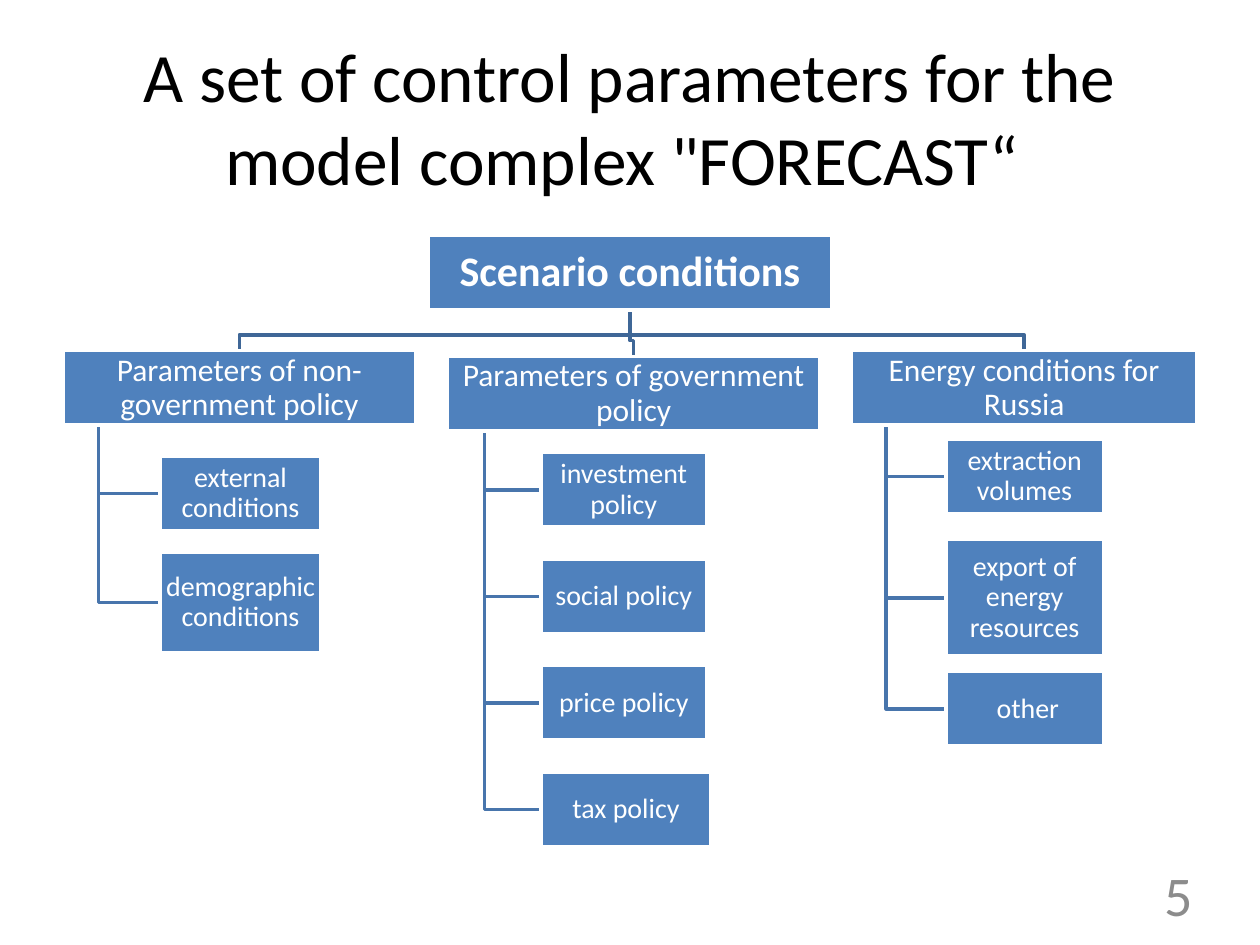
from lxml import etree
from pptx import Presentation
from pptx.dml.color import RGBColor
from pptx.enum.shapes import MSO_SHAPE
from pptx.enum.text import MSO_ANCHOR, PP_ALIGN
from pptx.util import Pt

RECTANGLE = MSO_SHAPE.RECTANGLE
MIDDLE = MSO_ANCHOR.MIDDLE
CENTER, RIGHT = PP_ALIGN.CENTER, PP_ALIGN.RIGHT

COLORS = {
    "box": "4F81BD", "white": "FFFFFF", "title": "000000", "number": "8C8C8C",
    "root_line": "3F6797", "item_line": "4875AC",
}
FONT = "Calibri"
ROW = 42.6          # usual box height
BEND = 9            # height of the last leg above a branch header
STEM = 0.1          # stem position as a share of the header width

ROOT = (244.8, 134.7, 230.4, ROW)
# Items: text, top below the header's top, width, height
BRANCHES = [
    {"text": "Parameters of non-government policy",
     "box": (36, 200.3, 201.6, ROW), "indent": 55.5,
     "items": [("external conditions", 60.5, 92, ROW),
               ("demographic conditions", 115.3, 92, 57.4)]},
    {"text": "Parameters of government policy",
     "box": (255.6, 203.7, 213, ROW), "indent": 53.5,
     "items": [(text, 54.9 + 60.9 * index, width, ROW)
               for index, (text, width) in enumerate([
                   ("investment policy", 94.7), ("social policy", 94.7),
                   ("price policy", 94.7), ("tax policy", 97.2)])]},
    {"text": "Energy conditions for Russia",
     "box": (486.6, 200.3, 197.3, ROW), "indent": 53.9,
     "items": [("extraction volumes", 50.7, 90, ROW),
               ("export of energy resources", 108, 90, 66.6),
               (" other", 183.5, 90, ROW)]},
]


def set_color(color_format, name):
    color_format.rgb = RGBColor.from_string(COLORS[name])


def write_text(shape, text, size, color, align=CENTER, inset=(7.2, 3.6),
               bold=False, spacing=1.0):
    frame = shape.text_frame
    horizontal, vertical = inset
    frame_format = {
        "word_wrap": True, "vertical_anchor": MIDDLE,
        "margin_left": Pt(horizontal), "margin_right": Pt(horizontal),
        "margin_top": Pt(vertical), "margin_bottom": Pt(vertical),
    }
    for name, value in frame_format.items():
        setattr(frame, name, value)
    paragraph = frame.paragraphs[0]
    paragraph.alignment = align
    paragraph.line_spacing = spacing
    run = paragraph.add_run()
    run.text = text
    for name, value in {"name": FONT, "size": Pt(size), "bold": bold}.items():
        setattr(run.font, name, value)
    set_color(run.font.color, color)


def add_label(slide, box, text, size, color, align=CENTER):
    shape = slide.shapes.add_textbox(*map(Pt, box))
    write_text(shape, text, size, color, align)


def add_box(slide, box, text, size, bold=False):
    shape = slide.shapes.add_shape(RECTANGLE, *map(Pt, box))
    shape.shadow.inherit = False
    shape.fill.solid()
    set_color(shape.fill.fore_color, "box")
    set_color(shape.line.color, "white")
    shape.line.width = Pt(2)
    inset = 1.2 if bold else 0.8
    write_text(shape, text, size, "white", inset=(inset, inset), bold=bold,
               spacing=0.9)


def add_elbow(slide, points, color):
    start, *others = [(Pt(x), Pt(y)) for x, y in points]
    builder = slide.shapes.build_freeform(*start)
    builder.add_line_segments(others, close=False)
    shape = builder.convert_to_shape()
    shape.shadow.inherit = False
    shape.fill.background()
    set_color(shape.line.color, color)
    shape.line.width = Pt(2)


def add_root_link(slide, root, header):
    """Link the bottom of the root to the top of a branch header."""
    left, top, width, height = root
    start_x = left + width / 2
    end_x, end_y = header[0] + header[2] / 2, header[1]
    points = [(start_x, top + height), (start_x, end_y - BEND),
              (end_x, end_y - BEND), (end_x, end_y)]
    add_elbow(slide, points, "root_line")


def add_branch(slide, box, text, indent, items):
    left, top, width, height = box
    stem_x, item_left = left + STEM * width, left + indent
    for _, offset, _, item_height in items:
        middle = top + offset + item_height / 2
        add_elbow(slide, [(stem_x, top + height), (stem_x, middle),
                          (item_left, middle)], "item_line")
    add_box(slide, box, text, 18)
    for item, offset, item_width, item_height in items:
        add_box(slide, (item_left, top + offset, item_width, item_height),
                item, 16)


def add_hierarchy(slide, root, branches):
    for branch in branches:
        add_root_link(slide, root, branch["box"])
    add_box(slide, root, "Scenario conditions", 24, bold=True)
    for branch in branches:
        add_branch(slide, **branch)


def main():
    presentation = Presentation()
    presentation.slide_width, presentation.slide_height = Pt(720), Pt(540)
    slide = presentation.slides.add_slide(presentation.slide_layouts[6])
    add_label(slide, (36, 21.6, 648, 90),
              'A set of control parameters for the model complex "FORECAST“ ',
              39.6, "title")
    add_hierarchy(slide, ROOT, BRANCHES)
    add_label(slide, (520.6, 496.8, 168, 28.8), "5", 32, "number", RIGHT)
    presentation.save("out.pptx")


if __name__ == "__main__":
    main()
